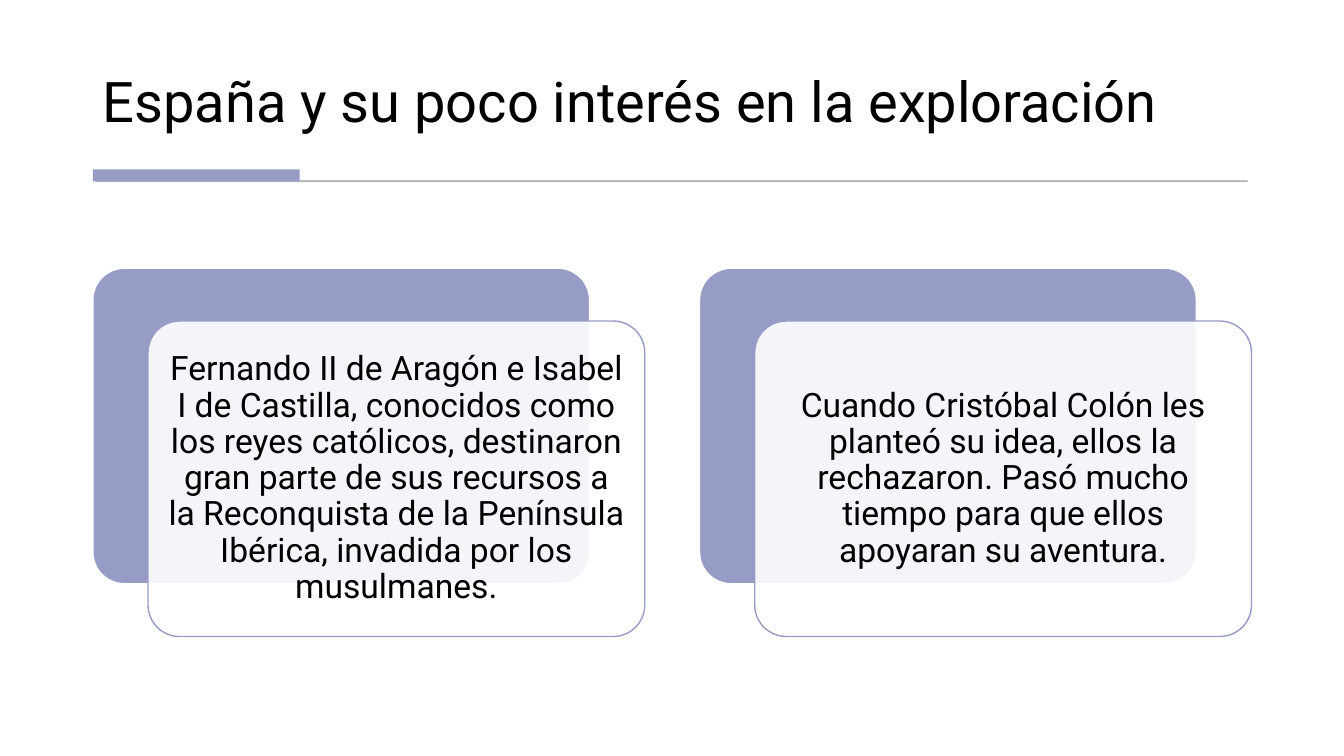
import lxml.etree
import pptx
import pptx.dml.color
import pptx.enum.shapes
import pptx.enum.text
import pptx.oxml.ns
import pptx.util

Cm = pptx.util.Cm
Pt = pptx.util.Pt
Shape = pptx.enum.shapes.MSO_SHAPE
Anchor = pptx.enum.text.MSO_ANCHOR
Align = pptx.enum.text.PP_ALIGN


def color(value):
    return pptx.dml.color.RGBColor.from_string(value)


def set_opacity(fill_format, percent):
    tag = pptx.oxml.ns.qn("a:alpha")
    element = fill_format._xPr.find(
        pptx.oxml.ns.qn("a:solidFill"))[0]
    lxml.etree.SubElement(element, tag).set("val", str(percent * 1000))


class Slide:
    font = "Roboto"
    ink = "000000"
    accent = "969CC6"
    gray = "595959"
    white = "FFFFFF"

    def __init__(self, deck):
        self.page = deck.slides.add_slide(deck.slide_layouts[5])
        self.page.background.fill.solid()
        self.page.background.fill.fore_color.rgb = color(self.white)

    def add_text(self, box, text, size, align, anchor):
        frame = box.text_frame
        frame.word_wrap = True
        frame.auto_size = pptx.enum.text.MSO_AUTO_SIZE.NONE
        frame.vertical_anchor = anchor
        para = frame.paragraphs[0]
        para.alignment = align
        para.line_spacing = 0.9
        span = para.add_run()
        span.text = text
        span.font.name = self.font
        span.font.size = Pt(size)
        span.font.color.rgb = color(self.ink)

    def title(self, text, left, top, width, height):
        box = self.page.shapes.title
        box.left, box.top = Cm(left), Cm(top)
        box.width, box.height = Cm(width), Cm(height)
        self.add_text(box, text, 40, Align.LEFT, Anchor.BOTTOM)

    def shape(self, kind, left, top, width, height, fill, line=None,
              weight=1, opacity=100, line_opacity=100):
        box = self.page.shapes.add_shape(
            kind, Cm(left), Cm(top), Cm(width), Cm(height))
        box.shadow.inherit = False
        box.fill.solid()
        box.fill.fore_color.rgb = color(fill)
        if opacity < 100:
            set_opacity(box.fill, opacity)
        if line is None:
            box.line.fill.background()
        else:
            box.line.color.rgb = color(line)
            box.line.width = Pt(weight)
            if line_opacity < 100:
                set_opacity(box.line.fill, line_opacity)
        return box

    def divider(self, left, top):
        self.shape(Shape.RECTANGLE, left + 0.07, top + 0.28, 29.03, 0.03,
                   self.gray, self.gray, 0.75, 30, 30)
        self.shape(Shape.RECTANGLE, left, top, 5.21, 0.3, self.accent)

    def card(self, text, left, top):
        width, height = 12.52, 7.95
        back = self.shape(Shape.ROUNDED_RECTANGLE, left, top, width, height,
                          self.accent, self.white)
        front = self.shape(Shape.ROUNDED_RECTANGLE, left + 1.39, top + 1.33,
                           width, height, self.white, self.accent, opacity=90)
        for box in (back, front):
            box.adjustments[0] = 0.1
        frame = front.text_frame
        frame.margin_left = frame.margin_right = Cm(0.25)
        frame.margin_top = frame.margin_bottom = Cm(0.25)
        self.add_text(front, text, 24, Align.CENTER, Anchor.MIDDLE)


def main():
    deck = pptx.Presentation()
    deck.slide_width, deck.slide_height = Cm(33.87), Cm(19.05)
    slide = Slide(deck)
    left, card_step = 2.34, 15.29
    slide.title("España y su poco interés en la exploración",
                left, 0.71, 29.18, 2.82)
    slide.divider(left, 4.27)
    cards = [
        "Fernando II de Aragón e Isabel I de Castilla, conocidos como los "
        "reyes católicos, destinaron gran parte de sus recursos a la "
        "Reconquista de la Península Ibérica, invadida por los musulmanes.",
        "Cuando Cristóbal Colón les planteó su idea, ellos la rechazaron. "
        "Pasó mucho tiempo para que ellos apoyaran su aventura.",
    ]
    for index, text in enumerate(cards):
        slide.card(text, left + index * card_step, 6.76)
    deck.save("out.pptx")


if __name__ == "__main__":
    main()
